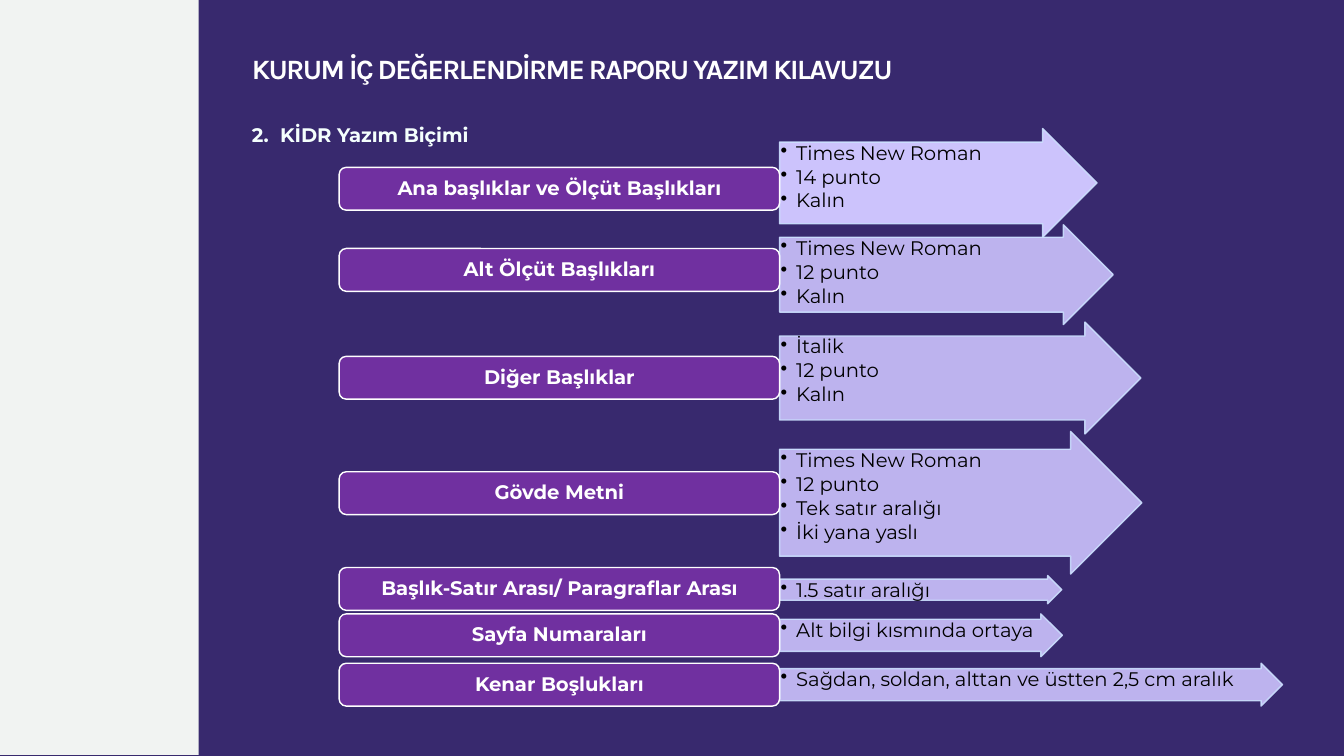
from dataclasses import dataclass

from lxml.etree import SubElement as Sub
from pptx import Presentation
from pptx.dml.color import RGBColor as Rgb
from pptx.enum.shapes import MSO_SHAPE as Kind
from pptx.enum.text import MSO_ANCHOR as Anchor, MSO_AUTO_SIZE as Fit, PP_ALIGN as Align
from pptx.oxml.ns import qn
from pptx.util import Pt

PX = 9144


@dataclass(frozen=True)
class Theme:
    """Colours, fonts and type sizes of the slide."""
    back: str = "38296E"
    panel: str = "F1F3F2"
    white: str = "FFFFFF"
    mint: str = "F4FFFD"
    label: str = "7030A0"
    arrow: str = "CCC3FC"
    edge: str = "CCE0FF"
    ink: str = "000000"
    head: str = "Karla"
    body: str = "Montserrat"
    big: int = 40
    text: int = 28


THEME = Theme()
LEFT, JOIN, LABEL_H = 673, 1547, 85

# label, label top, arrow top, arrow width, arrow height, points
ROWS = [
    ("Ana başlıklar ve Ölçüt Başlıkları", 332, 255, 630, 216,
     ["Times New Roman", "14 punto", "Kalın"]),
    ("Alt Ölçüt Başlıkları", 493, 446, 662, 198,
     ["Times New Roman", "12 punto", "Kalın"]),
    ("Diğer Başlıklar", 707, 639, 717, 222,
     ["İtalik", "12 punto", "Kalın"]),
    ("Gövde Metni", 936, 856, 719, 283,
     ["Times New Roman", "12 punto", "Tek satır aralığı", "İki yana yaslı"]),
    ("Başlık-Satır Arası/ Paragraflar Arası", 1126, 1142, 560, 56,
     ["1.5 satır aralığı"]),
    ("Sayfa Numaraları", 1218, 1218, 561, 85,
     ["Alt bilgi kısmında ortaya"]),
    ("Kenar Boşlukları", 1316, 1316, 998, 85,
     ["Sağdan, soldan, alttan ve üstten 2,5 cm aralık"]),
]


def px(*vals):
    """Turn px lengths into EMU."""
    return [val * PX for val in vals]


def set_frame(shape, anchor, side, top):
    """Set wrapping, anchor and insets, and return the text frame."""
    frame = shape.text_frame
    frame.word_wrap, frame.auto_size = True, Fit.NONE
    frame.vertical_anchor = anchor
    frame.margin_left, frame.margin_right = px(side, side)
    frame.margin_top, frame.margin_bottom = px(top, top)
    return frame


def style(para, color, size, face, bold=False, align=Align.LEFT, lead=0.9):
    """Format a paragraph and its runs."""
    para.alignment, para.line_spacing = align, lead
    for run in para.runs:
        font = run.font
        font.name, font.size, font.bold = face, Pt(size), bold
        font.color.rgb = Rgb.from_string(color)


def add_mark(para, indent, tag, **attrs):
    """Give a paragraph a hanging bullet or number."""
    props = para._p.get_or_add_pPr()
    props.set("marL", str(indent * PX))
    props.set("indent", str(-indent * PX))
    Sub(props, qn(tag), attrs)


def add_block(slide, kind, box, fill, line=None):
    """Add a filled shape without a shadow."""
    shape = slide.shapes.add_shape(kind, *px(*box))
    shape.shadow.inherit = False
    shape.fill.solid()
    shape.fill.fore_color.rgb = Rgb.from_string(fill)
    if line:
        shape.line.color.rgb = Rgb.from_string(line)
        shape.line.width = Pt(2)
    else:
        shape.line.fill.background()
    return shape


def add_title(slide, text):
    """Place and format the title placeholder."""
    title = slide.shapes.title
    title.left, title.top, title.width, title.height = px(492, 61, 1764, 117)
    frame = set_frame(title, Anchor.MIDDLE, 8, 8)
    frame.text = text
    para = frame.paragraphs[0]
    style(para, THEME.white, THEME.big, THEME.head, True, lead=1.5)
    para.runs[0].font._element.set("spc", "-220")


def add_heading(slide, text):
    """Add the numbered section heading."""
    box = slide.shapes.add_textbox(*px(492, 212, 2111, 86))
    frame = set_frame(box, Anchor.MIDDLE, 8, 8)
    frame.text = text
    para = frame.paragraphs[0]
    add_mark(para, 56, "a:buAutoNum", type="arabicPeriod", startAt="2")
    style(para, THEME.mint, THEME.text, THEME.body, True, Align.JUSTIFY, 1.5)


def add_arrow(slide, box, points, solid):
    """Add an arrow that holds a bulleted list."""
    arrow = add_block(slide, Kind.RIGHT_ARROW, box, THEME.arrow, THEME.edge)
    arrow.adjustments[0], arrow.adjustments[1] = 0.75, 0.5
    tints = list(arrow._element.spPr.iter(qn("a:srgbClr")))
    for tint in tints[1:] if solid else tints:
        Sub(tint, qn("a:alpha"), val="90000")
    frame = set_frame(arrow, Anchor.TOP, 2, 2)
    frame.text = "\n".join(points)
    for para in frame.paragraphs:
        add_mark(para, 31, "a:buChar", char="•")
        style(para, THEME.ink, THEME.text, THEME.body)
        para.space_after = Pt(4)


def add_label(slide, top, text):
    """Add a rounded label that ends where the arrows start."""
    box = (LEFT, top, JOIN - LEFT, LABEL_H)
    label = add_block(slide, Kind.ROUNDED_RECTANGLE, box, THEME.label, THEME.white)
    frame = set_frame(label, Anchor.MIDDLE, 12, 6)
    frame.text = text
    style(frame.paragraphs[0], THEME.white, THEME.text, THEME.body, True, Align.CENTER)


def main():
    """Build and save the slide."""
    deck = Presentation()
    deck.slide_width, deck.slide_height = px(2667, 1500)
    slide = deck.slides.add_slide(deck.slide_layouts[5])
    slide.background.fill.solid()
    slide.background.fill.fore_color.rgb = Rgb.from_string(THEME.back)
    add_block(slide, Kind.RECTANGLE, (0, -2, 394, 1500), THEME.panel)
    add_title(slide, "KURUM İÇ DEĞERLENDİRME RAPORU YAZIM KILAVUZU")
    add_heading(slide, "KİDR Yazım Biçimi")
    for num, (text, top, peak, width, height, points) in enumerate(ROWS):
        add_arrow(slide, (JOIN, peak, width, height), points, num == 0)
        add_label(slide, top, text)
    deck.save("out.pptx")


if __name__ == "__main__":
    main()
